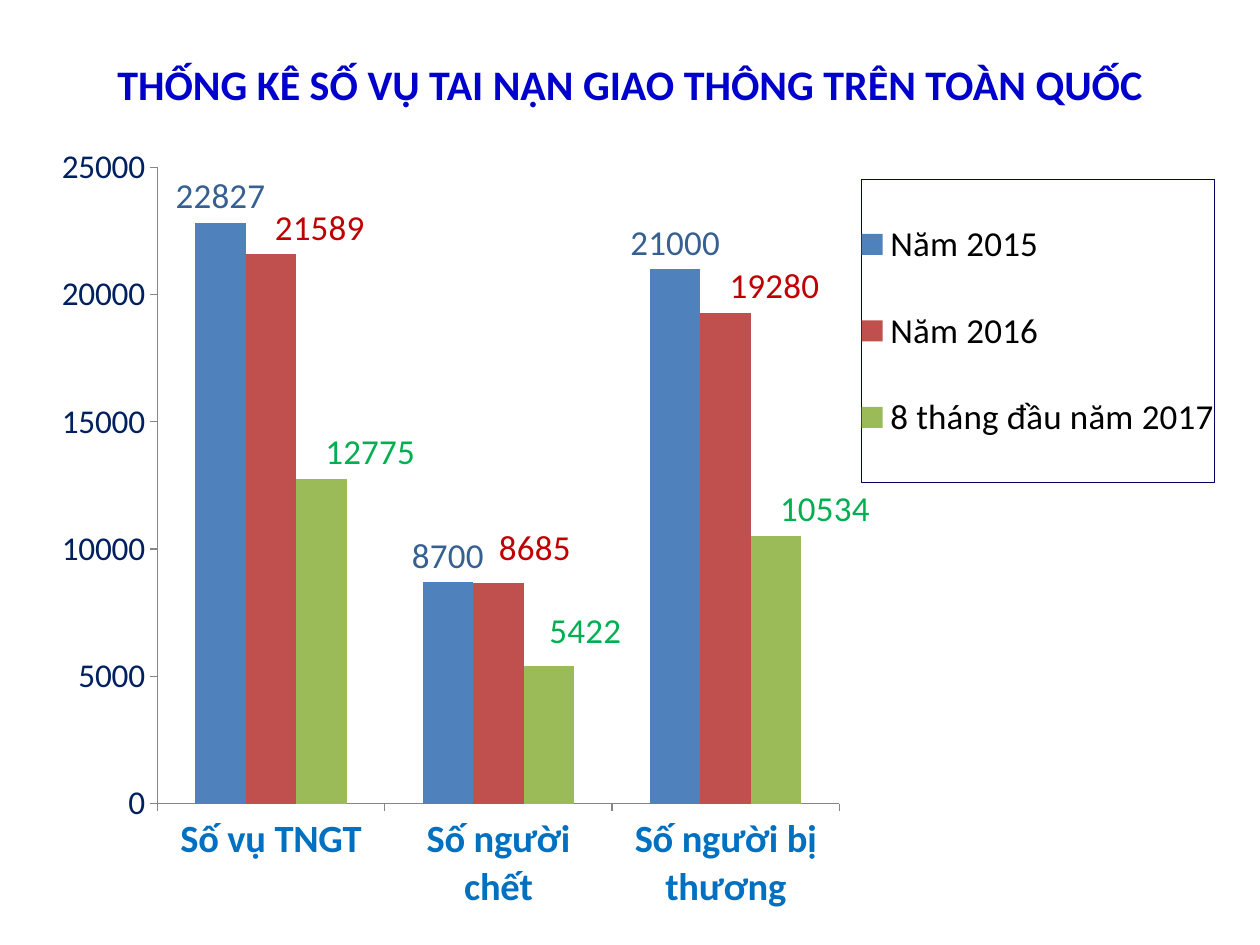
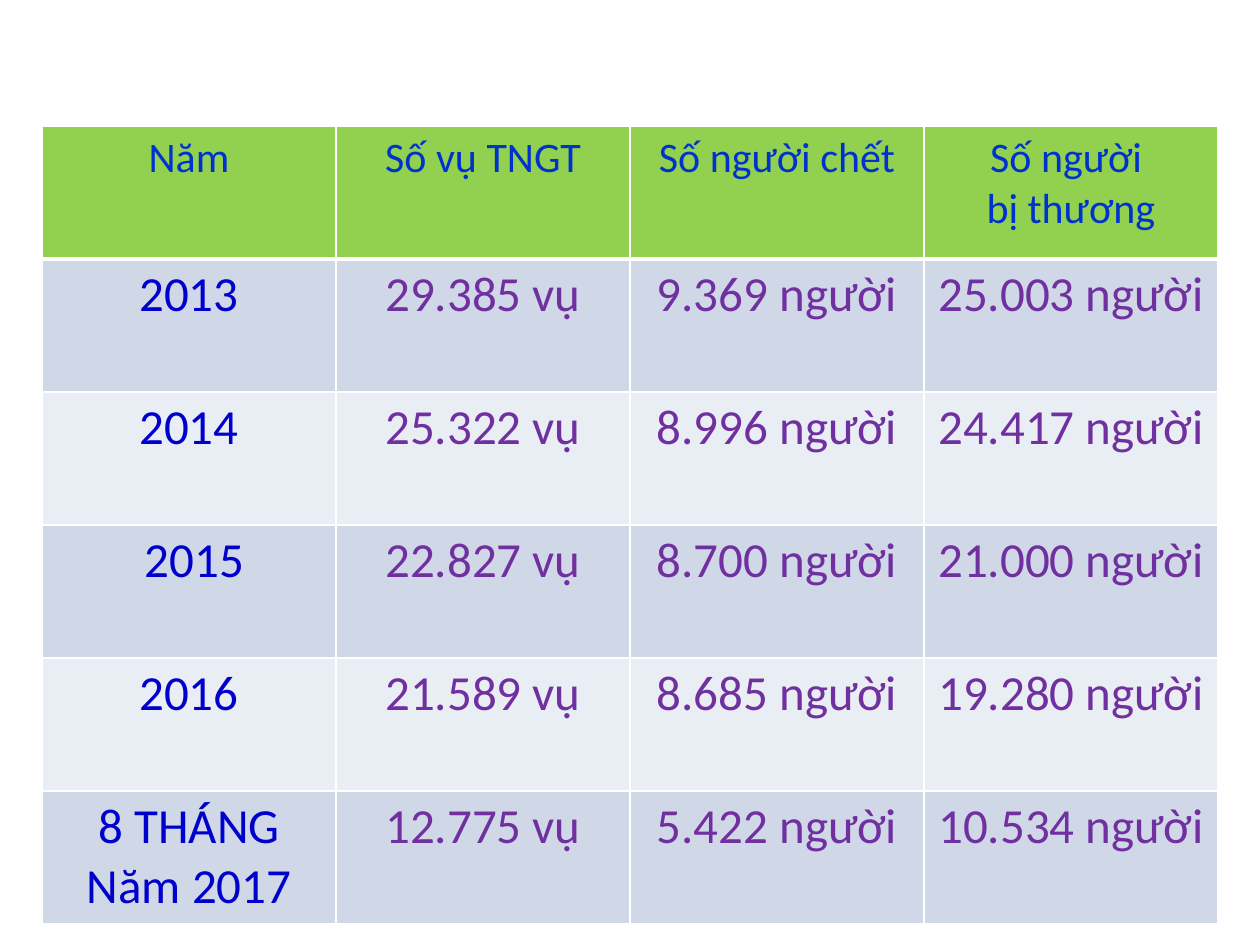
from lxml.etree import SubElement
from pptx import Presentation
from pptx.chart.data import CategoryChartData
from pptx.dml.color import RGBColor
from pptx.enum.chart import XL_CHART_TYPE as ChartType
from pptx.enum.chart import XL_LABEL_POSITION as LabelPosition
from pptx.enum.chart import XL_LEGEND_POSITION as LegendPosition
from pptx.enum.chart import XL_TICK_MARK as TickMark
from pptx.enum.text import MSO_ANCHOR as Anchor
from pptx.enum.text import PP_ALIGN as Align
from pptx.oxml.ns import qn
from pptx.util import Pt

FONT = "Calibri"
BLUE = "0000CC"
HEADER_BLUE = "0033CC"
PURPLE = "7030A0"
HEADER_GREEN = "92D050"
BANDS = ("D0D8E8", "E9EDF4")
WHITE = "FFFFFF"
AXIS_GRAY = "868686"
LEGEND_BORDER = "000066"
TITLE_ONLY, BLANK = 5, 6

CATEGORIES = ("Số vụ TNGT", "Số người chết", "Số người bị thương")
ACCIDENT_SERIES = (
    ("Năm 2015", (22827, 8700, 21000), "4F81BD", "376092", ()),
    ("Năm 2016", (21589, 8685, 19280), "C0504D", "C00000",
     ((0.04, 0), (0.03, -0.01), (0.04, 0))),
    ("8 tháng đầu năm 2017", (12775, 5422, 10534), "9BBB59", "00B050",
     ((0.04, 0), (0.03, -0.01), (0.04, 0))),
)
TABLE_HEADER = ("Năm", "Số vụ TNGT", "Số người chết", "Số người \nbị thương")
YEAR_ROWS = (
    ("2013", "29.385", "9.369", "25.003"),
    ("2014", "25.322", "8.996", "24.417"),
    (" 2015", "22.827", "8.700", "21.000"),
    ("2016", "21.589", "8.685", "19.280"),
    ("8 THÁNG\nNăm 2017", "12.775", "5.422", "10.534"),
)
UNITS = ("", " vụ", " người", " người")


def color(value):
    return RGBColor.from_string(value)


def style_font(font, size, value, bold=False):
    font.name = FONT
    font.size = Pt(size)
    font.bold = bold
    font.color.rgb = color(value)


def add_line(parent, tag, value, width):
    line = SubElement(parent, qn(tag), w=str(Pt(width)))
    fill = SubElement(line, qn("a:solidFill"))
    SubElement(fill, qn("a:srgbClr"), val=value)
    return line


def set_layout(parent, position, modes, numbers):
    for previous in parent.findall(qn("c:layout")):
        parent.remove(previous)
    layout = SubElement(parent, qn("c:layout"))
    manual = SubElement(layout, qn("c:manualLayout"))
    for tag, value in (*modes, *zip("xywh", numbers)):
        SubElement(manual, qn(f"c:{tag}"), val=str(value))
    parent.insert(position, layout)


class Deck:
    edge_modes = (("xMode", "edge"), ("yMode", "edge"))

    def __init__(self):
        self.presentation = Presentation()
        self.presentation.slide_width = Pt(720)
        self.presentation.slide_height = Pt(540)
        self.slide = None

    def add_slide(self, layout):
        layouts = self.presentation.slide_layouts
        self.slide = self.presentation.slides.add_slide(layouts[layout])

    def add_title(self, text, left, top, width, height):
        title = self.slide.shapes.title
        title.left, title.top = Pt(left), Pt(top)
        title.width, title.height = Pt(width), Pt(height)
        frame = title.text_frame
        frame.text = text
        frame.word_wrap = True
        frame.vertical_anchor = Anchor.MIDDLE
        paragraph = frame.paragraphs[0]
        paragraph.alignment = Align.CENTER
        style_font(paragraph.font, 24, BLUE, True)

    def add_column_chart(self, left, top, width, height):
        data = CategoryChartData(number_format="0")
        data.categories = CATEGORIES
        for name, values, *_ in ACCIDENT_SERIES:
            data.add_series(name, values)
        chart = self.slide.shapes.add_chart(
            ChartType.COLUMN_CLUSTERED, Pt(left), Pt(top), Pt(width), Pt(height), data
        ).chart
        style_font(chart.font, 10, "000000")
        chart.has_title = False
        self.style_axis(chart.category_axis, 22, "0070C0", True)
        self.style_axis(chart.value_axis, 19, "002060")
        chart.value_axis.minimum_scale = 0
        chart.value_axis.maximum_scale = 25000
        chart.value_axis.major_unit = 5000
        chart.value_axis.tick_labels.number_format = "0"
        chart.value_axis.tick_labels.number_format_is_linked = False
        self.style_columns(chart.plots[0])
        self.place_labels(chart)
        plot_area = chart.element.xpath(".//c:plotArea")[0]
        modes = (("layoutTarget", "inner"), *self.edge_modes)
        set_layout(plot_area, 0, modes, (0.112, 0.025, 0.56, 0.798))
        self.style_legend(chart)

    def style_axis(self, axis, size, value, bold=False):
        axis.has_major_gridlines = False
        axis.major_tick_mark = TickMark.OUTSIDE
        axis.minor_tick_mark = TickMark.NONE
        axis.format.line.color.rgb = color(AXIS_GRAY)
        axis.format.line.width = Pt(0.75)
        style_font(axis.tick_labels.font, size, value, bold)

    def style_columns(self, plot):
        plot.gap_width = 150
        plot.overlap = 0
        plot.vary_by_categories = False
        for series, (_, _, fill, label_color, offsets) in zip(plot.series, ACCIDENT_SERIES):
            series.format.fill.solid()
            series.format.fill.fore_color.rgb = color(fill)
            series.invert_if_negative = False
            labels = series.data_labels
            labels.show_value = True
            labels.number_format = "0"
            labels.number_format_is_linked = False
            labels.position = LabelPosition.OUTSIDE_END
            style_font(labels.font, 20, label_color)
            for index in range(len(offsets)):
                label = series.points[index].data_label
                style_font(label.font, 20, label_color)
                label.position = LabelPosition.OUTSIDE_END

    def place_labels(self, chart):
        offsets = [offset for *_, group in ACCIDENT_SERIES for offset in group]
        for label, offset in zip(chart.element.xpath(".//c:dLbl"), offsets):
            set_layout(label, 1, (), offset)

    def style_legend(self, chart):
        chart.has_legend = True
        legend = chart.legend
        legend.position = LegendPosition.RIGHT
        legend.include_in_layout = False
        style_font(legend.font, 20, "000000")
        element = chart.element.xpath(".//c:legend")[0]
        set_layout(element, 1, self.edge_modes, (0.69, 0.04, 0.29, 0.38))
        properties = SubElement(element, qn("c:spPr"))
        add_line(properties, "a:ln", LEGEND_BORDER, 0.75)
        element.find(qn("c:txPr")).addprevious(properties)

    def add_table(self, rows, left, top, width, height):
        table = self.slide.shapes.add_table(
            len(rows), len(rows[0]), Pt(left), Pt(top), Pt(width), Pt(height)
        ).table
        for row_index, row in enumerate(rows):
            for column_index, text in enumerate(row):
                cell = table.cell(row_index, column_index)
                if row_index == 0:
                    self.fill_cell(cell, text, HEADER_GREEN, 24, HEADER_BLUE, 3)
                else:
                    text_color = PURPLE if column_index else BLUE
                    band = BANDS[(row_index - 1) % 2]
                    self.fill_cell(cell, text, band, 28, text_color)

    def fill_cell(self, cell, text, fill, size, text_color, bottom_width=1):
        cell.text = text
        for paragraph in cell.text_frame.paragraphs:
            paragraph.alignment = Align.CENTER
            style_font(paragraph.font, size, text_color)
        properties = cell._tc.get_or_add_tcPr()
        for side in "LRTB":
            width = bottom_width if side == "B" else 1
            add_line(properties, f"a:ln{side}", WHITE, width)
        cell.fill.solid()
        cell.fill.fore_color.rgb = color(fill)


def main():
    deck = Deck()
    deck.add_slide(TITLE_ONLY)
    deck.add_column_chart(12, 84, 696, 456)
    deck.add_title("THỐNG KÊ SỐ VỤ TAI NẠN GIAO THÔNG TRÊN TOÀN QUỐC", 36, 30, 648, 36)

    deck.add_slide(BLANK)
    year_rows = [[text + unit for text, unit in zip(row, UNITS)] for row in YEAR_ROWS]
    deck.add_table([TABLE_HEADER, *year_rows], 24, 72, 672, 456)
    deck.presentation.save("out.pptx")


if __name__ == "__main__":
    main()
